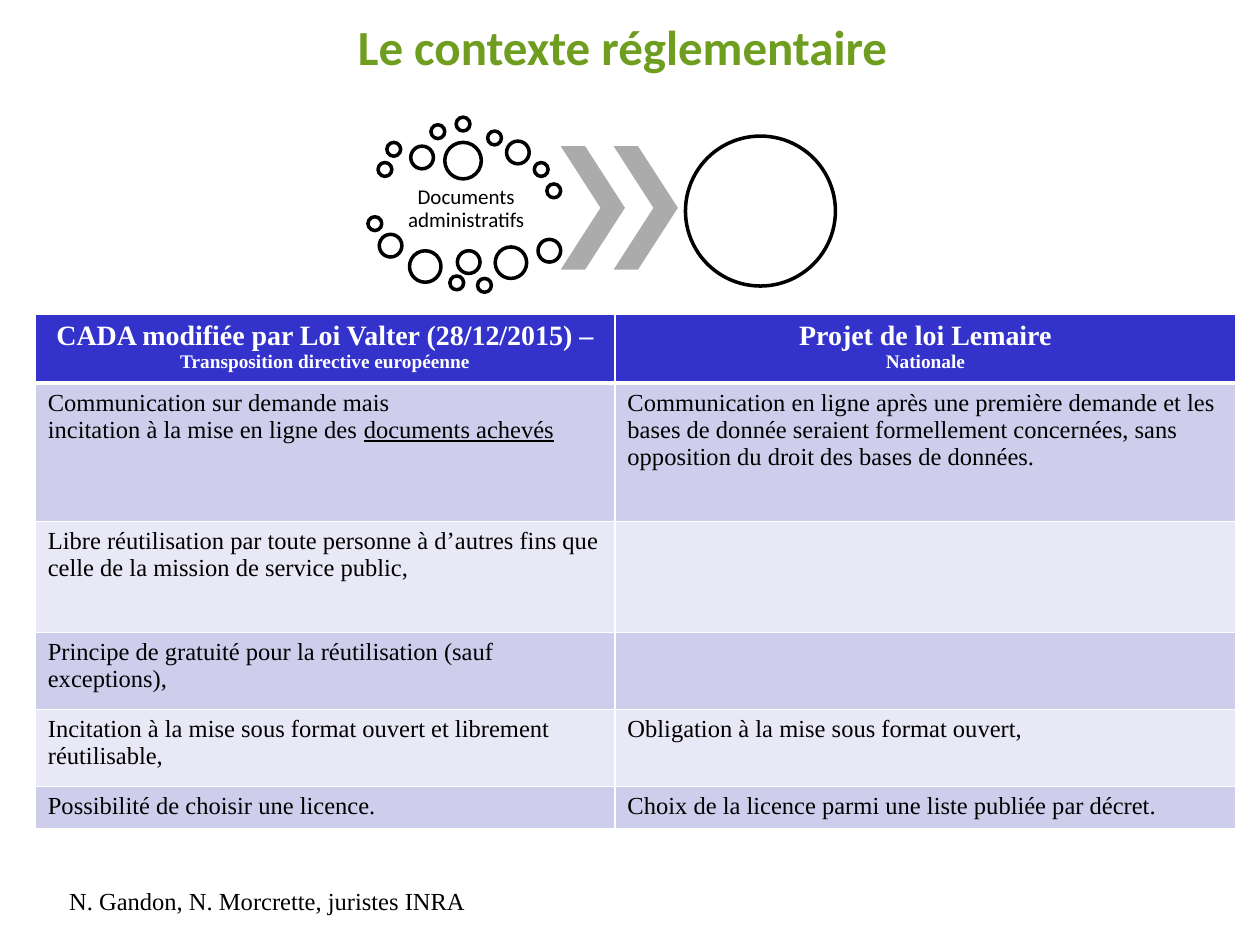
from typing import NamedTuple

from lxml.etree import SubElement
from pptx import Presentation
from pptx.dml.color import RGBColor
from pptx.enum.shapes import MSO_SHAPE
from pptx.enum.text import MSO_ANCHOR, PP_ALIGN
from pptx.oxml.ns import qn
from pptx.util import Inches, Pt

COLORS = {
    "title": "6F9D20",
    "text": "000000",
    "white": "FFFFFF",
    "chevron": "ABABAB",
    "header": "3333CC",
    "odd_row": "CECEEC",
    "even_row": "E8E8F6",
}
SERIF = "Times New Roman"
SANS = "Calibri"


class Bubble(NamedTuple):
    left: float
    top: float
    size: float


class Run(NamedTuple):
    text: str
    size: float = 14
    underline: bool = False


SMALL, MEDIUM, LARGE, LARGEST, RESULT = 0.11, 0.18, 0.25, 0.29, 1.19
BUBBLES = [
    # Above the label
    Bubble(3, 1.29, SMALL), Bubble(3.07, 1.13, SMALL), Bubble(3.26, 1.16, MEDIUM),
    Bubble(3.42, 0.99, SMALL), Bubble(3.62, 0.93, SMALL), Bubble(3.87, 1.04, SMALL),
    Bubble(4.02, 1.12, MEDIUM), Bubble(4.24, 1.29, SMALL), Bubble(4.34, 1.46, SMALL),
    Bubble(3.53, 1.13, LARGEST),
    # Below the label
    Bubble(2.92, 1.72, SMALL), Bubble(3.01, 1.86, MEDIUM), Bubble(3.25, 1.99, LARGE),
    Bubble(3.57, 2.19, SMALL), Bubble(3.63, 1.99, MEDIUM), Bubble(3.79, 2.21, SMALL),
    Bubble(3.93, 1.96, LARGE), Bubble(4.27, 1.9, MEDIUM),
    # Result of the process
    Bubble(5.44, 1.08, RESULT),
]

# Each cell is a list of paragraphs, each paragraph a list of runs
HEADER = [
    [[Run("CADA modifiée par Loi Valter (28/12/2015) – ", 16),
      Run("Transposition directive européenne", 11)]],
    [[Run("Projet de loi Lemaire", 16)], [Run("Nationale", 11)]],
]
BODY = [
    [[[Run("Communication sur demande mais")],
      [Run("incitation à la mise en ligne des "), Run("documents achevés", underline=True)]],
     [[Run("Communication en ligne après une première demande et les bases de donnée "
           "seraient formellement concernées, sans opposition du droit des bases de données.")]]],
    [[[Run("Libre réutilisation par toute personne à d’autres fins que celle de la mission "
           "de service public,")]], []],
    [[[Run("Principe de gratuité pour la réutilisation (sauf exceptions),")]], []],
    [[[Run("Incitation à la mise sous format ouvert et librement réutilisable,")]],
     [[Run("Obligation à la mise sous format ouvert,")]]],
    [[[Run("Possibilité de choisir une licence.")]],
     [[Run("Choix de la licence parmi une liste publiée par décret.")]]],
]
COLUMN_WIDTHS = [4.6, 4.93]
ROW_HEIGHTS = [0.5, 1.1, 0.88, 0.61, 0.61, 0.34]


def color(name: str) -> RGBColor:
    return RGBColor.from_string(COLORS[name])


def write(frame, paragraphs: list, *, font: str = SERIF, ink: str = "text",
          bold: bool = False, align=PP_ALIGN.LEFT, spacing: float = 1.0) -> None:
    for index, runs in enumerate(paragraphs):
        paragraph = frame.add_paragraph() if index else frame.paragraphs[0]
        paragraph.alignment = align
        paragraph.line_spacing = spacing
        for part in runs:
            run = paragraph.add_run()
            run.text = part.text
            run.font.name = font
            run.font.size = Pt(part.size)
            run.font.bold = bold
            run.font.underline = part.underline
            run.font.color.rgb = color(ink)


def add_label(shapes, run: Run, left: float, top: float, width: float, height: float,
              *, anchor=MSO_ANCHOR.TOP, margin: float | None = None, **text_format) -> None:
    frame = shapes.add_textbox(Inches(left), Inches(top), Inches(width), Inches(height)).text_frame
    frame.word_wrap = True
    frame.vertical_anchor = anchor
    if margin is not None:
        frame.margin_left = frame.margin_right = Inches(margin)
        frame.margin_top = frame.margin_bottom = Inches(margin)
    write(frame, [[run]], **text_format)


def add_bubble(shapes, bubble: Bubble) -> None:
    circle = shapes.add_shape(MSO_SHAPE.OVAL, Inches(bubble.left), Inches(bubble.top),
                              Inches(bubble.size), Inches(bubble.size))
    circle.shadow.inherit = False
    circle.fill.solid()
    circle.fill.fore_color.rgb = color("white")
    circle.line.color.rgb = color("text")
    circle.line.width = Pt(2)


def add_chevron(shapes, left: float) -> None:
    chevron = shapes.add_shape(MSO_SHAPE.CHEVRON, Inches(left), Inches(1.16),
                               Inches(0.51), Inches(0.98))
    chevron.adjustments[0] = 0.62
    chevron.shadow.inherit = False
    chevron.fill.solid()
    chevron.fill.fore_color.rgb = color("chevron")
    chevron.line.fill.background()


def set_borders(cell, **widths: float) -> None:
    properties = cell._tc.get_or_add_tcPr()
    for side in ("L", "R", "T", "B"):
        line = SubElement(properties, qn(f"a:ln{side}"), w=str(Pt(widths.get(side, 1))))
        SubElement(SubElement(line, qn("a:solidFill")), qn("a:srgbClr"), val=COLORS["white"])


def fill_cell(cell, paragraphs: list, background: str, borders: dict, **text_format) -> None:
    set_borders(cell, **borders)
    cell.fill.solid()
    cell.fill.fore_color.rgb = color(background)
    write(cell.text_frame, paragraphs, **text_format)


def add_comparison(shapes) -> None:
    table = shapes.add_table(len(ROW_HEIGHTS), len(COLUMN_WIDTHS), Inches(0.28), Inches(2.49),
                             Inches(sum(COLUMN_WIDTHS)), Inches(sum(ROW_HEIGHTS))).table
    for column, width in zip(table.columns, COLUMN_WIDTHS):
        column.width = Inches(width)
    for row, height in zip(table.rows, ROW_HEIGHTS):
        row.height = Inches(height)
    for column, paragraphs in enumerate(HEADER):
        fill_cell(table.cell(0, column), paragraphs, "header", {"B": 3},
                  ink="white", bold=True, align=PP_ALIGN.CENTER)
    for row, cells in enumerate(BODY, start=1):
        background = "odd_row" if row % 2 else "even_row"
        borders = {"T": 3} if row == 1 else {}
        for column, paragraphs in enumerate(cells):
            fill_cell(table.cell(row, column), paragraphs, background, borders)


def main() -> None:
    presentation = Presentation()
    presentation.slide_width = Inches(10)
    presentation.slide_height = Inches(7.5)
    slide = presentation.slides.add_slide(presentation.slide_layouts[6])

    # Title
    add_label(slide.shapes, Run("Le contexte réglementaire", 28), 0, 0.05, 9.88, 0.63,
              anchor=MSO_ANCHOR.MIDDLE, font=SANS, ink="title", bold=True,
              align=PP_ALIGN.CENTER)

    # Diagram: scattered documents converging into one circle
    diagram = slide.shapes.add_group_shape().shapes
    add_label(diagram, Run("Documents administratifs", 12), 3, 1.43, 1.4, 0.46,
              anchor=MSO_ANCHOR.MIDDLE, margin=0.02, font=SANS,
              align=PP_ALIGN.CENTER, spacing=0.9)
    for bubble in BUBBLES:
        add_bubble(diagram, bubble)
    for left in (4.45, 4.87):
        add_chevron(diagram, left)

    # Comparison of the two laws
    add_comparison(slide.shapes)

    # Authors
    add_label(slide.shapes, Run("N. Gandon, N. Morcrette, juristes INRA"), 0.45, 6.98, 9.21, 0.34)

    presentation.save("out.pptx")


if __name__ == "__main__":
    main()
